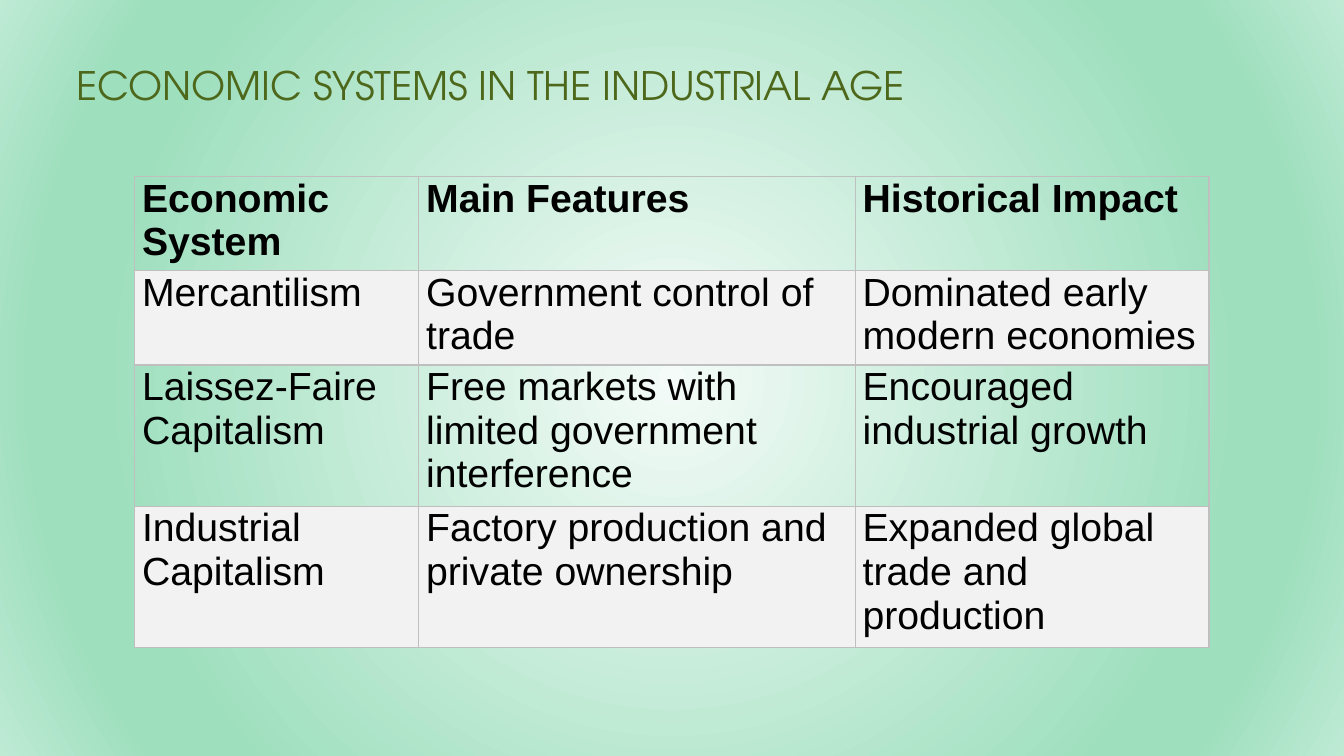
from lxml.etree import SubElement as Sub
from pptx import Presentation
from pptx.dml.color import RGBColor as RGB
from pptx.enum.shapes import MSO_SHAPE as Shape
from pptx.enum.text import MSO_ANCHOR as Anchor
from pptx.oxml.ns import qn
from pptx.util import Cm, Pt

TITLE = "ECONOMIC SYSTEMS IN THE INDUSTRIAL AGE"
ROWS = [
    ("Economic System", "Main Features", "Historical Impact"),
    ("Mercantilism", "Government control of trade", "Dominated early modern economies"),
    ("Laissez-Faire Capitalism", "Free markets with limited government interference",
     "Encouraged industrial growth"),
    ("Industrial Capitalism", "Factory production and private ownership",
     "Expanded global trade and production"),
]
WIDTHS = (7.16, 11, 8.92)
LINES = (2, 2, 3, 3)
LINE = 1.1

OLIVE = RGB(0x4D, 0x67, 0x1B)
BLACK = RGB(0, 0, 0)
PALE = RGB(0xF2, 0xF2, 0xF2)
GRID = RGB(0xBF, 0xBF, 0xBF)
MINT = RGB(0x9E, 0xDF, 0xBE)
GLOW = [(0, RGB(0xF4, 0xFB, 0xF8)), (74, MINT), (83, MINT), (100, RGB(0xBE, 0xEA, 0xD4))]

HEAD = {"name": "TeX Gyre Adventor", "size": Pt(28)}
BODY = {"name": "Arial", "size": Pt(28)}
INSET = {"margin_left": Cm(0.19), "margin_right": Cm(0.19),
         "margin_top": 0, "margin_bottom": 0}


def apply(item, values):
    for key, value in values.items():
        setattr(item, key, value)


def write(par, text, style, color, bold=False):
    run = par.add_run()
    run.text = text
    apply(run.font, {**style, "bold": bold})
    run.font.color.rgb = color


def glow(shape):
    """Fill a shape with a gradient that spreads from its centre."""
    shape.fill.background()
    props = shape.fill._xPr
    old = props.find(qn("a:noFill"))
    grad = old.makeelement(qn("a:gradFill"), {"rotWithShape": "1"})
    props.replace(old, grad)
    stops = Sub(grad, qn("a:gsLst"))
    for pos, color in GLOW:
        stop = Sub(stops, qn("a:gs"), pos=str(pos * 1000))
        Sub(stop, qn("a:srgbClr"), val=str(color))
    ring = Sub(grad, qn("a:path"), path="circle")
    Sub(ring, qn("a:fillToRect"), {side: "50000" for side in "ltrb"})


def border(cell):
    props = cell._tc.get_or_add_tcPr()
    for side in "LRTB":
        edge = Sub(props, qn(f"a:ln{side}"), w=str(Pt(1)))
        fill = Sub(edge, qn("a:solidFill"))
        Sub(fill, qn("a:srgbClr"), val=str(GRID))


def main():
    deck = Presentation()
    apply(deck, {"slide_width": Cm(33.87), "slide_height": Cm(19.05)})
    slide = deck.slides.add_slide(deck.slide_layouts[6])

    back = slide.shapes.add_shape(Shape.RECTANGLE, 0, 0, deck.slide_width, deck.slide_height)
    back.shadow.inherit = False
    back.line.fill.background()
    glow(back)

    title = slide.shapes.add_textbox(Cm(1.68), Cm(0.64), Cm(29.64), Cm(2.24)).text_frame
    apply(title, {"word_wrap": True, "vertical_anchor": Anchor.BOTTOM})
    title.paragraphs[0].line_spacing = 0.9
    write(title.paragraphs[0], TITLE, HEAD, OLIVE)

    table = slide.shapes.add_table(
        len(ROWS), len(WIDTHS), Cm(3.39), Cm(4.45),
        Cm(sum(WIDTHS)), Cm(sum(LINES) * LINE)).table
    apply(table, {"first_row": False, "horz_banding": False})
    for col, width in zip(table.columns, WIDTHS):
        col.width = Cm(width)
    for r, (row, texts) in enumerate(zip(table.rows, ROWS)):
        row.height = Cm(LINES[r] * LINE)
        for cell, text in zip(row.cells, texts):
            apply(cell, INSET)
            border(cell)
            if r % 2:
                cell.fill.solid()
                cell.fill.fore_color.rgb = PALE
            else:
                cell.fill.background()
            write(cell.text_frame.paragraphs[0], text, BODY, BLACK, bold=r == 0)

    deck.save("out.pptx")


if __name__ == "__main__":
    main()
